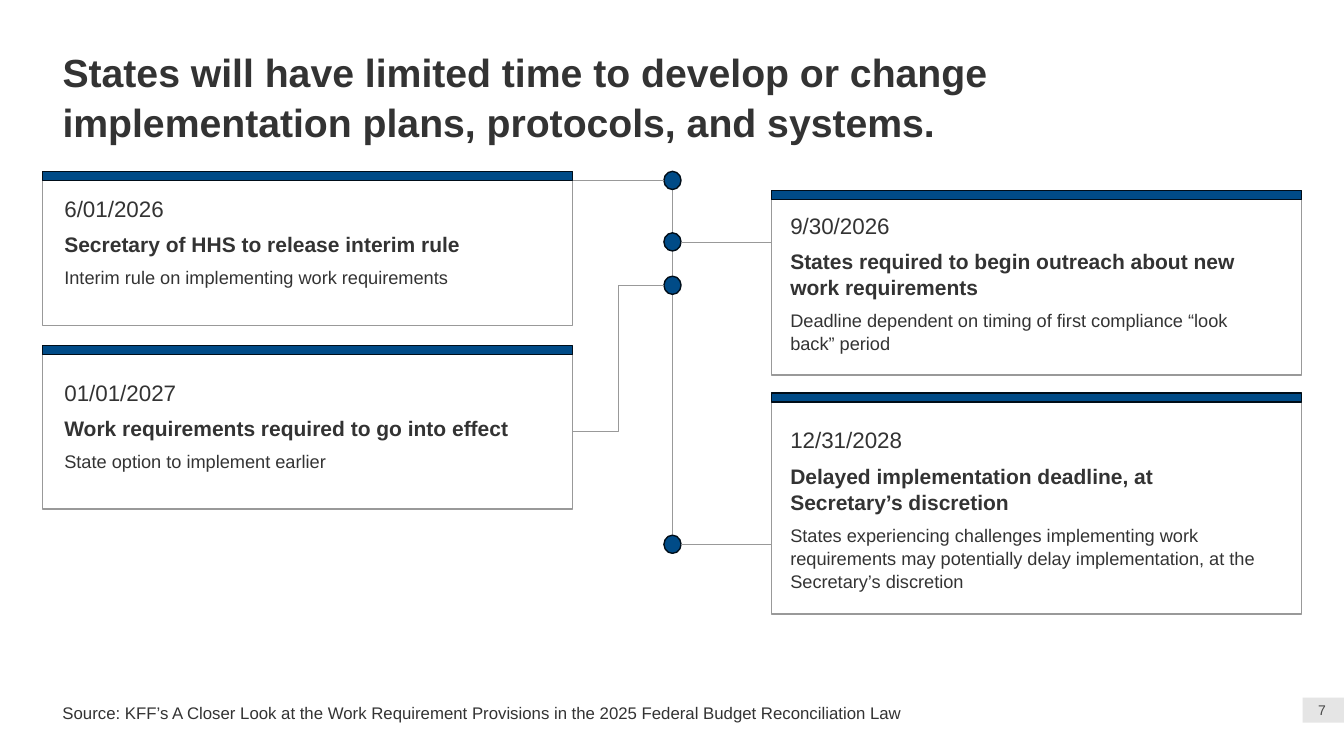
from lxml import etree
from pptx import Presentation
from pptx.dml.color import RGBColor
from pptx.enum import shapes, text
from pptx.oxml import ns
from pptx.util import Inches, Pt

TITLE = "States will have limited time to develop or change implementation plans, protocols, and systems."
SOURCE = ("Source: KFF’s A Closer Look at the Work Requirement Provisions "
          "in the 2025 Federal Budget Reconciliation Law")
PAGE_NUMBER = "7"

MILESTONES = [
    dict(left=0.42, bar=1.7, top=1.7, height=1.53, text_at=(0.54, 1.87, 1.01), dot=1.79, join=1.79,
         lines=("6/01/2026", "Secretary of HHS to release interim rule",
                "Interim rule on implementing work requirements")),
    dict(left=7.65, bar=1.89, top=1.89, height=1.83, text_at=(7.74, 2.04, 1.48), dot=2.4, join=2.4,
         lines=("9/30/2026", "States required to begin outreach about new work requirements",
                "Deadline dependent on timing of first compliance “look back” period")),
    dict(left=0.42, bar=3.43, top=3.52, height=1.53, text_at=(0.54, 3.7, 1.01), dot=2.83, join=4.28,
         lines=("01/01/2027", "Work requirements required to go into effect",
                "State option to implement earlier")),
    dict(left=7.65, bar=3.9, top=3.9, height=2.19, text_at=(7.74, 4.17, 1.7), dot=5.4, join=5.4,
         lines=("12/31/2028", "Delayed implementation deadline, at Secretary’s discretion",
                "States experiencing challenges implementing work requirements may potentially "
                "delay implementation, at the Secretary’s discretion")),
]

LINE_STYLES = [(16, False, 6), (15, True, 6), (13, False, 0)]
CARD_WIDTH, BAR_HEIGHT, TEXT_WIDTH = 5.26, 0.09, 4.8
AXIS, DOT_WIDTH, DOT_HEIGHT = 6.67, 0.17, 0.18

INK = RGBColor(0x33, 0x33, 0x33)
NUMBER_INK = RGBColor(0x47, 0x47, 0x47)
NUMBER_FILL = RGBColor(0xE5, 0xE5, 0xE5)
BLUE = RGBColor(0x00, 0x4B, 0x87)
EDGE = RGBColor(0x00, 0x0D, 0x18)
GREY = RGBColor(0x99, 0x99, 0x99)

presentation = Presentation()
presentation.slide_width, presentation.slide_height = Inches(13.33), Inches(7.5)
slide = presentation.slides.add_slide(presentation.slide_layouts[6])


def add_figure(kind, left, top, width, height, fill=None, line=None):
    shape = slide.shapes.add_shape(kind, Inches(left), Inches(top), Inches(width), Inches(height))
    shape.shadow.inherit = False
    if fill is None:
        shape.fill.background()
    else:
        shape.fill.solid()
        shape.fill.fore_color.rgb = fill
    if line is None:
        shape.line.fill.background()
    else:
        shape.line.color.rgb = line
        shape.line.width = Pt(1)


def add_link(kind, start, end):
    connector = slide.shapes.add_connector(kind, *(Inches(value) for value in start + end))
    connector.line.color.rgb = GREY
    connector.line.width = Pt(0.5)
    etree.SubElement(connector._element.spPr, ns.qn("a:effectLst"))


def add_text(left, top, width, height, lines, color=INK, anchor=text.MSO_ANCHOR.TOP,
             align=text.PP_ALIGN.LEFT, inset=True, right_inset=0, spacing=1.05):
    box = slide.shapes.add_textbox(Inches(left), Inches(top), Inches(width), Inches(height))
    frame = box.text_frame
    frame.word_wrap = True
    frame.vertical_anchor = anchor
    if not inset:
        frame.margin_left = frame.margin_top = frame.margin_bottom = 0
        frame.margin_right = Inches(right_inset)
    for index, (words, size, bold, after) in enumerate(lines):
        paragraph = frame.add_paragraph() if index else frame.paragraphs[0]
        paragraph.alignment = align
        paragraph.line_spacing = spacing
        paragraph.space_after = Pt(after)
        run = paragraph.add_run()
        run.text = words
        run.font.name = "Arial"
        run.font.size = Pt(size)
        run.font.bold = bold
        run.font.color.rgb = color
    return frame


rectangle, oval = shapes.MSO_SHAPE.RECTANGLE, shapes.MSO_SHAPE.OVAL
straight, elbow = shapes.MSO_CONNECTOR.STRAIGHT, shapes.MSO_CONNECTOR.ELBOW

add_figure(rectangle, 12.92, 6.92, 0.42, 0.25, NUMBER_FILL)
add_text(0.62, 6.77, 9.13, 0.4, [(SOURCE, 12, False, 2)],
         anchor=text.MSO_ANCHOR.BOTTOM, inset=False)
add_text(12.92, 6.92, 0.23, 0.25, [(PAGE_NUMBER, 10, False, 0)], color=NUMBER_INK,
         anchor=text.MSO_ANCHOR.MIDDLE, align=text.PP_ALIGN.RIGHT, inset=False, spacing=1)
add_text(0.62, 0.46, 12.08, 1, [(TITLE, 28, True, 0)], inset=False, right_inset=2)

add_link(straight, (AXIS, MILESTONES[0]["dot"]), (AXIS, MILESTONES[-1]["dot"]))

for milestone in MILESTONES:
    left, dot, join = milestone["left"], milestone["dot"], milestone["join"]
    side = -1 if left < AXIS else 1
    card_edge = left + CARD_WIDTH if side < 0 else left
    add_figure(oval, AXIS - DOT_WIDTH / 2, dot - DOT_HEIGHT / 2, DOT_WIDTH, DOT_HEIGHT, BLUE, EDGE)
    add_figure(rectangle, left, milestone["top"], CARD_WIDTH, milestone["height"], line=GREY)
    add_figure(rectangle, left, milestone["bar"], CARD_WIDTH, BAR_HEIGHT, BLUE, EDGE)
    add_link(straight if dot == join else elbow,
             (AXIS + side * DOT_WIDTH / 2, dot), (card_edge, join))
    text_left, text_top, text_height = milestone["text_at"]
    lines = [(words, *style) for words, style in zip(milestone["lines"], LINE_STYLES)]
    frame = add_text(text_left, text_top, TEXT_WIDTH, text_height, lines)
    frame.auto_size = text.MSO_AUTO_SIZE.SHAPE_TO_FIT_TEXT

presentation.save("out.pptx")
